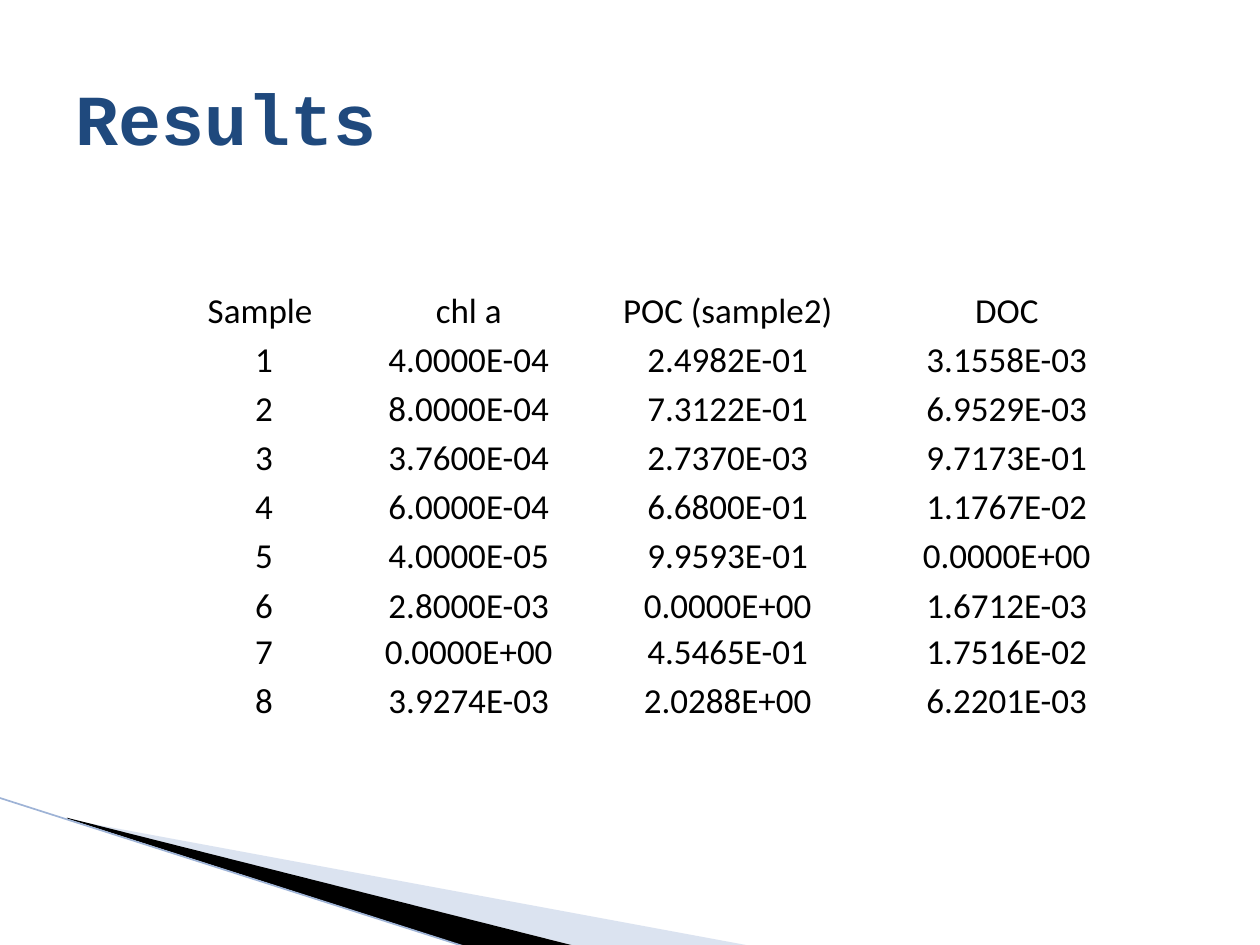
from typing import NamedTuple

from lxml.etree import SubElement
from pptx import Presentation
from pptx.dml.color import RGBColor
from pptx.enum.shapes import MSO_CONNECTOR as Link
from pptx.enum.text import MSO_ANCHOR as Anchor, PP_ALIGN as Align
from pptx.oxml.ns import qn
from pptx.util import Pt


class Wedge(NamedTuple):
    points: list[tuple[float, float]]
    color: str
    alpha: int = 100  # percent


WEDGES = [
    Wedge([(39.6, 468.4), (428.4, 540.4), (328.3, 540.4)], "A7B9DB", 40),
    Wedge([(38.2, 467.3), (329, 540.7), (267.8, 541.4), (38.9, 468)], "000000"),
]

WIDTHS = [110.2, 123.8, 172.1, 146.9]
HEIGHTS = [28.1] * 7 + [26.6, 28.1]
HEADS = ["Sample ", "chl a", "POC (sample2)", "DOC"]
VALUES = [
    ("4.0000E-04", "2.4982E-01", "3.1558E-03"),
    ("8.0000E-04", "7.3122E-01", "6.9529E-03"),
    ("3.7600E-04", "2.7370E-03", "9.7173E-01"),
    ("6.0000E-04", "6.6800E-01", "1.1767E-02"),
    ("4.0000E-05", "9.9593E-01", "0.0000E+00"),
    ("2.8000E-03", "0.0000E+00", "1.6712E-03"),
    ("0.0000E+00", "4.5465E-01", "1.7516E-02"),
    ("3.9274E-03", "2.0288E+00", "6.2201E-03"),
]


def paint(target, color: str) -> None:
    target.rgb = RGBColor.from_string(color)


def write(frame, text: str, *, size: float, font: str, color: str = "000000",
          bold: bool = False, align=Align.LEFT) -> None:
    para = frame.paragraphs[0]
    para.alignment = align
    run = para.add_run()
    run.text = text
    run.font.size, run.font.name, run.font.bold = Pt(size), font, bold
    paint(run.font.color, color)


def draw_wedge(slide, wedge: Wedge) -> None:
    first, *rest = [(Pt(x), Pt(y)) for x, y in wedge.points]
    pen = slide.shapes.build_freeform(*first)
    pen.add_line_segments(rest, close=True)
    shape = pen.convert_to_shape()
    shape.shadow.inherit = False
    shape.line.fill.background()
    shape.fill.solid()
    paint(shape.fill.fore_color, wedge.color)
    if wedge.alpha < 100:
        tone = shape.fill._xPr.find(".//" + qn("a:srgbClr"))
        SubElement(tone, qn("a:alpha"), val=str(wedge.alpha * 1000))


def draw_edge(slide) -> None:
    ends = [Pt(v) for v in (-0.7, 455.8, 267.1, 541.4)]
    edge = slide.shapes.add_connector(Link.STRAIGHT, *ends)
    edge.line.width = Pt(0.95)
    paint(edge.line.color, "9EB3D6")
    SubElement(edge._element.spPr, qn("a:effectLst"))


def draw_table(slide) -> None:
    rows = [HEADS] + [(str(i), *vals) for i, vals in enumerate(VALUES, 1)]
    table = slide.shapes.add_table(
        len(rows), len(HEADS), Pt(95.8), Pt(162),
        Pt(sum(WIDTHS)), Pt(sum(HEIGHTS))).table
    table.first_row = table.horz_banding = False
    for col, width in zip(table.columns, WIDTHS):
        col.width = Pt(width)
    for row, height, texts in zip(table.rows, HEIGHTS, rows):
        row.height = Pt(height)
        for cell, text in zip(row.cells, texts):
            cell.fill.background()
            cell.vertical_anchor = Anchor.BOTTOM
            cell.margin_left = cell.margin_right = cell.margin_top = Pt(0.7)
            cell.margin_bottom = 0
            write(cell.text_frame, text, size=20, font="Calibri",
                  align=Align.CENTER)


def main() -> None:
    deck = Presentation()
    deck.slide_width, deck.slide_height = Pt(720), Pt(540)
    slide = deck.slides.add_slide(deck.slide_layouts[5])

    # Corner decoration
    for wedge in WEDGES:
        draw_wedge(slide, wedge)
    draw_edge(slide)

    # Results table
    draw_table(slide)

    # Title
    title = slide.shapes.title
    title.left, title.top = Pt(36), Pt(21.6)
    title.width, title.height = Pt(648), Pt(90)
    title.text_frame.vertical_anchor = Anchor.MIDDLE
    write(title.text_frame, "Results", size=41, font="Courier New",
          color="1F497D", bold=True)

    deck.save("out.pptx")


if __name__ == "__main__":
    main()
